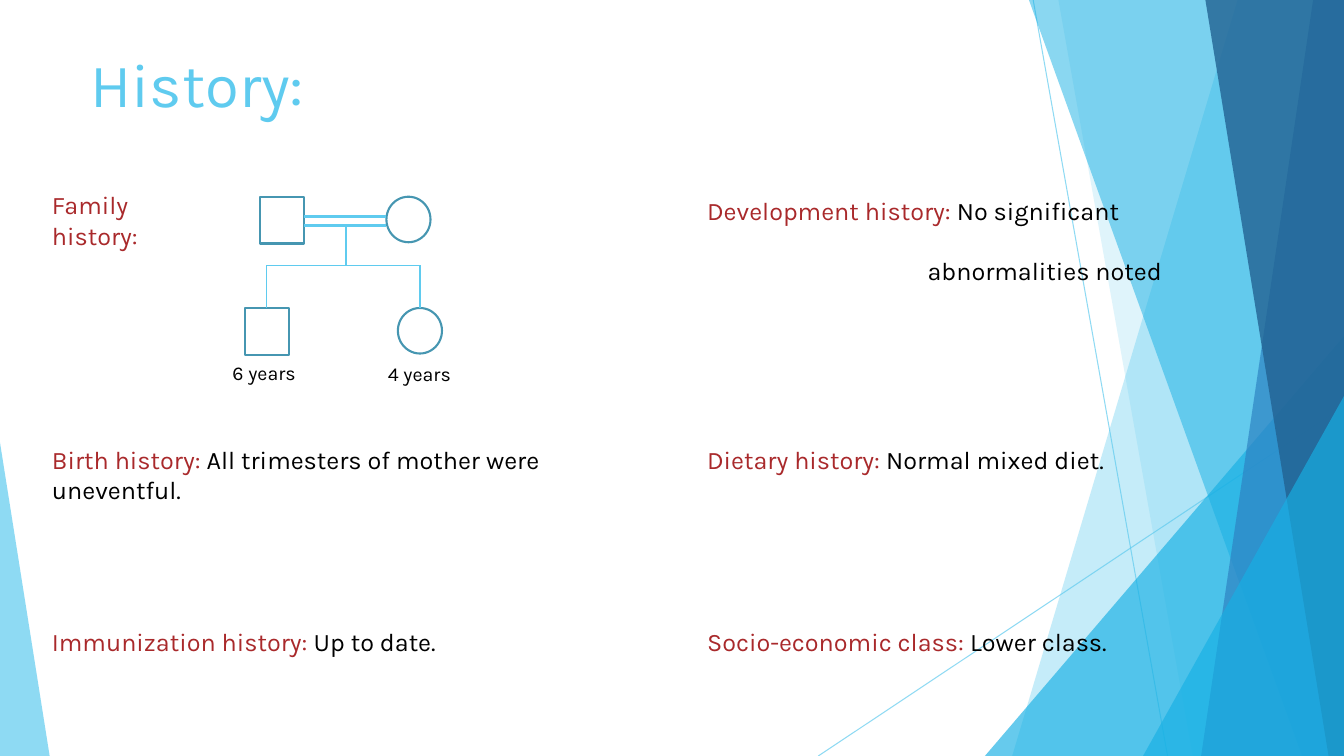
from lxml import etree
from pptx import Presentation
from pptx.dml.color import RGBColor
from pptx.enum import shapes, text
from pptx.oxml.ns import qn
from pptx.util import Pt

COLORS = {"sky": "5FCBEF", "cyan": "17B0E4", "blue": "2E83C3", "navy": "226292",
          "outline": "4696B1", "label": "A9292B", "black": "000000", "white": "FFFFFF"}
W, H = 960, 540
SHAPE = shapes.MSO_SHAPE

prs = Presentation()
prs.slide_width, prs.slide_height = Pt(W), Pt(H)
s = prs.slides.add_slide(prs.slide_layouts[6])


def paint(fmt, color, opacity=100):
    """Give a fill a solid colour with an opacity in percent."""
    fmt.solid()
    fmt.fore_color.rgb = RGBColor.from_string(COLORS[color])
    if opacity < 100:
        clr = fmt._xPr.find(qn("a:solidFill"))[0]
        etree.SubElement(clr, qn("a:alpha")).set("val", str(opacity * 1000))


def add_line(x1, y1, x2, y2, width, opacity=100):
    c = s.shapes.add_connector(shapes.MSO_CONNECTOR.STRAIGHT, Pt(x1), Pt(y1), Pt(x2), Pt(y2))
    paint(c.line.fill, "sky", opacity)
    c.line.width = Pt(width)
    etree.SubElement(c._element.spPr, qn("a:effectLst"))


# Background facets
add_line(738, 0, 834, H, 0.75, 70)
add_line(W, 290, 584.5, H, 0.75, 70)

# Bands run to the right edge: (top x, bottom x); triangles: (left, top, width, tip)
facets = [
    ((884, 723), "sky", 36),
    ((756, 852), "sky", 20),
    ((703.5, 240, 256.5, 1), "cyan", 66),
    ((735, 930), "cyan", 50),
    ((938, 858), "blue", 70),
    ((861, 949), "navy", 80),
    ((816.5, 283, 143.5, 1), "cyan", 66),
    ((0, 316, 35.5, 0), "sky", 70),
]
for geometry, color, opacity in facets:
    if len(geometry) == 2:
        top_x, bottom_x = geometry
        outline = s.shapes.build_freeform(top_x, 0, scale=12700)
        outline.add_line_segments([(W, 0), (W, H), (bottom_x, H)], close=True)
        sp = outline.convert_to_shape()
    else:
        left, top, width, tip = geometry
        sp = s.shapes.add_shape(SHAPE.ISOSCELES_TRIANGLE, Pt(left), Pt(top), Pt(width), Pt(H - top))
        sp.adjustments[0] = tip
    sp.shadow.inherit = False
    paint(sp.fill, color, opacity)
    sp.line.fill.background()

# Family tree: parents above, children below
people = [
    (SHAPE.RECTANGLE, 185.8, 140.5, 33.5),
    (SHAPE.OVAL, 276, 140.5, 32.5),
    (SHAPE.RECTANGLE, 174.7, 220, 33.5),
    (SHAPE.OVAL, 284.2, 220, 32.5),
]
for kind, left, top, height in people:
    sp = s.shapes.add_shape(kind, Pt(left), Pt(top), Pt(31.5), Pt(height))
    sp.shadow.inherit = False
    paint(sp.fill, "white")
    paint(sp.line.fill, "outline")
    sp.line.width = Pt(1.5)

for y in (154.6, 161.2):
    add_line(217.5, y, 276, y, 2.25)
add_line(247.2, 161.2, 247.2, 189.6, 1)
add_line(190.3, 189.6, 300.1, 189.6, 1)
for x in (190.3, 300.1):
    add_line(x, 189.6, x, 220, 1)

# Texts: left, top, width, height, size, paragraphs of (text, colour) runs
LEFT, RIGHT = 30, 498
texts = [
    (57.5, 29, 516, 60.5, 44, [[("History:", "sky")]]),
    (159, 254, 75, 24.5, 14, [[("6 years", "black")]]),
    (270, 255, 75, 24.5, 14, [[("4 years", "black")]]),
    (LEFT, 132, 126, 29, 18, [[("Family history:", "label")]]),
    (LEFT, 314, 450, 29, 18, [[("Birth history: ", "label"),
                               ("All trimesters of mother were uneventful.", "black")]]),
    (LEFT, 444, 390, 29, 18, [[("Immunization history: ", "label"), ("Up to date.", "black")]]),
    (RIGHT, 136, 354, 51, 18, [[("Development history: ", "label"), ("No significant", "black")],
                               [("abnormalities noted", "black")]]),
    (RIGHT, 314, 354, 29, 18, [[("Dietary history: ", "label"), ("Normal mixed diet.", "black")]]),
    (RIGHT, 444, 354, 29, 18, [[("Socio-economic class: ", "label"), ("Lower class.", "black")]]),
]
for left, top, width, height, size, paragraphs in texts:
    tf = s.shapes.add_textbox(Pt(left), Pt(top), Pt(width), Pt(height)).text_frame
    tf.word_wrap = True
    tf.auto_size = text.MSO_AUTO_SIZE.SHAPE_TO_FIT_TEXT
    for i, runs in enumerate(paragraphs):
        p = tf.paragraphs[0]
        if i:
            p = tf.add_paragraph()
            p.space_before = Pt(21.5)
            p._p.get_or_add_pPr().set("marL", str(Pt(157.5)))
        for words, color in runs:
            r = p.add_run()
            r.text = words
            r.font.name = "Karla"
            r.font.size = Pt(size)
            r.font.color.rgb = RGBColor.from_string(COLORS[color])

prs.save("out.pptx")
